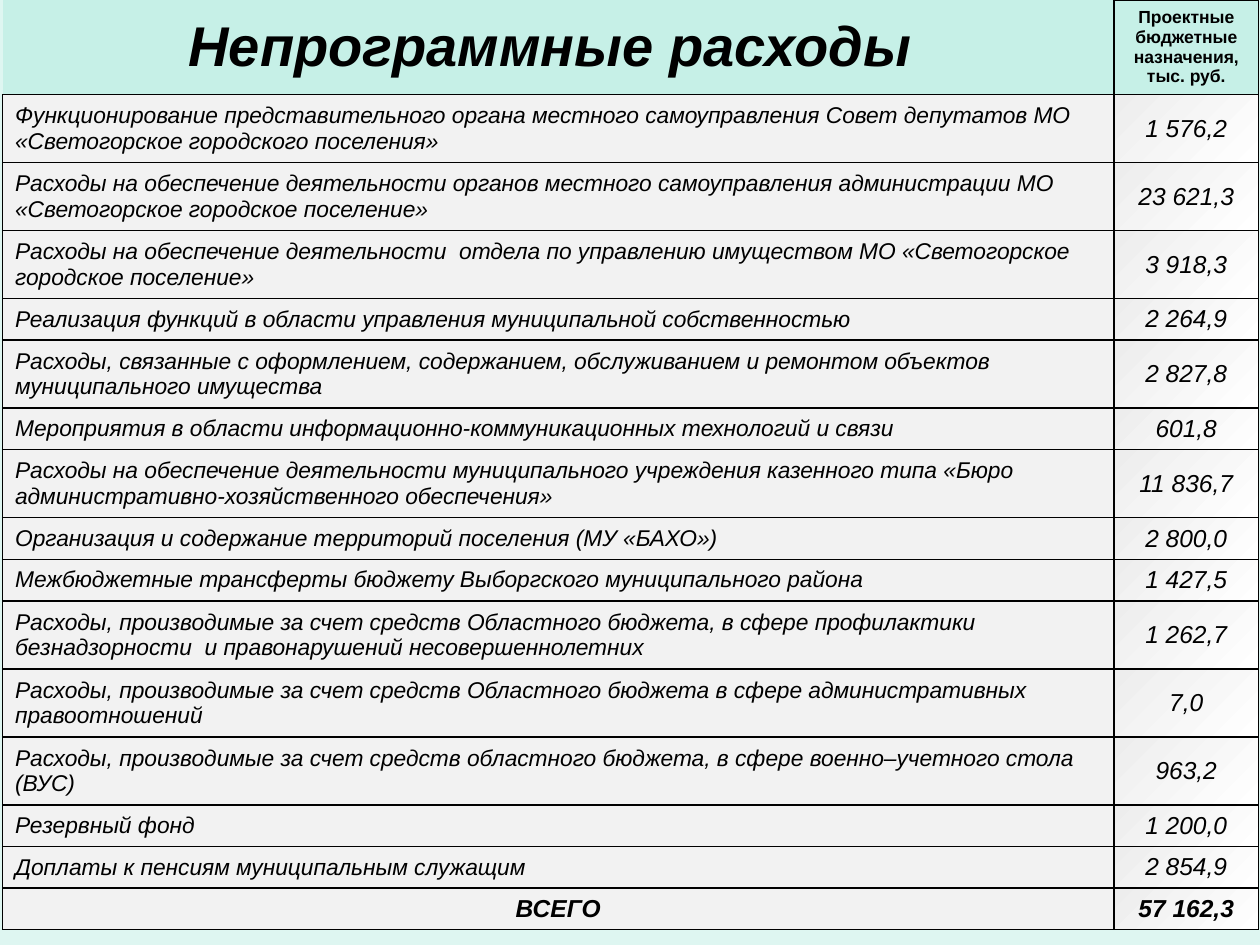
from dataclasses import dataclass

from lxml import etree
from pptx import Presentation
from pptx.dml.color import RGBColor
from pptx.enum import text
from pptx.oxml import ns
from pptx.util import Inches, Pt


@dataclass(frozen=True)
class Theme:
    font: str = "Arial"
    ink: str = "000000"
    page: str = "DEF6F1"
    header: str = "C6F0E7"
    label: str = "F2F2F2"
    amount: tuple = ("EDEDED", "FFFFFF")
    title_size: int = 32
    heading_size: int = 10
    label_size: int = 13
    amount_size: int = 14
    border: int = 1


THEME = Theme()
LEFT, TOP = 0.02, 0
COLUMN_WIDTHS = (8.82, 1.15)
HEADER_HEIGHT = 0.75
LINE_HEIGHTS = {1: 0.33, 2: 0.54}

HEADINGS = ("Непрограммные расходы ", "Проектные бюджетные назначения, тыс. руб.")
TOTAL = ("ВСЕГО", "57 162,3")
# Label, amount, number of text lines in the label
EXPENSES = [
    ("Функционирование представительного органа местного самоуправления "
     "Совет депутатов МО «Светогорское городского поселения»", "1 576,2", 2),
    ("Расходы на обеспечение деятельности органов местного самоуправления "
     "администрации МО «Светогорское городское поселение»", "23 621,3", 2),
    ("Расходы на обеспечение деятельности  отдела по управлению имуществом "
     "МО «Светогорское городское поселение»", "3 918,3", 2),
    ("Реализация функций в области управления муниципальной собственностью",
     "2 264,9", 1),
    ("Расходы, связанные с оформлением, содержанием, обслуживанием и ремонтом "
     "объектов муниципального имущества", "2 827,8", 2),
    ("Мероприятия в области информационно-коммуникационных технологий и связи",
     "601,8", 1),
    ("Расходы на обеспечение деятельности муниципального учреждения казенного "
     "типа «Бюро административно-хозяйственного обеспечения»", "11 836,7", 2),
    ("Организация и содержание территорий поселения (МУ «БАХО»)", "2 800,0", 1),
    ("Межбюджетные трансферты бюджету Выборгского муниципального района",
     "1 427,5", 1),
    ("Расходы, производимые за счет средств Областного бюджета, в сфере "
     "профилактики безнадзорности  и правонарушений несовершеннолетних",
     "1 262,7", 2),
    ("Расходы, производимые за счет средств Областного бюджета в сфере "
     "административных правоотношений", "7,0", 2),
    ("Расходы, производимые за счет средств областного бюджета, в сфере "
     "военно–учетного стола (ВУС)", "963,2", 2),
    ("Резервный фонд", "1 200,0", 1),
    ("Доплаты к пенсиям муниципальным служащим", "2 854,9", 1),
]


def fill_solid(fill, color):
    fill.solid()
    fill.fore_color.rgb = RGBColor.from_string(color)


def fill_gradient(fill, colors):
    """Blend two colours from the top left to the bottom right."""
    fill.gradient()
    fill.gradient_angle = 315
    for stop, color in zip(fill.gradient_stops, colors):
        stop.color.rgb = RGBColor.from_string(color)


def set_borders(cell, visible="LRTB"):
    """Draw the visible sides and clear the others; call before filling."""
    properties = cell._tc.get_or_add_tcPr()
    for side in "LRTB":
        line = etree.SubElement(properties, ns.qn(f"a:ln{side}"))
        if side in visible:
            line.set("w", str(Pt(THEME.border)))
            paint = etree.SubElement(line, ns.qn("a:solidFill"))
            etree.SubElement(paint, ns.qn("a:srgbClr"), val=THEME.ink)
        else:
            etree.SubElement(line, ns.qn("a:noFill"))


def write_cell(cell, words, size, bold=False, italic=True, centred=True):
    cell.text_frame.text = words
    cell.vertical_anchor = text.MSO_ANCHOR.MIDDLE
    cell.margin_left = cell.margin_right = Inches(0.1)
    cell.margin_top = cell.margin_bottom = Inches(0.05)
    para = cell.text_frame.paragraphs[0]
    para.alignment = text.PP_ALIGN.CENTER if centred else text.PP_ALIGN.LEFT
    font = para.runs[0].font
    font.name, font.size = THEME.font, Pt(size)
    font.bold, font.italic = bold, italic
    font.color.rgb = RGBColor.from_string(THEME.ink)


def write_header(title, heading):
    write_cell(title, HEADINGS[0], THEME.title_size, bold=True)
    write_cell(heading, HEADINGS[1], THEME.heading_size, bold=True, italic=False)
    set_borders(title, "RB")
    set_borders(heading)
    for cell in (title, heading):
        fill_solid(cell.fill, THEME.header)


def write_row(label, amount, words, value, total=False):
    label_size = THEME.amount_size if total else THEME.label_size
    write_cell(label, words, label_size, bold=total, centred=total)
    write_cell(amount, value, THEME.amount_size, bold=total)
    for cell in (label, amount):
        set_borders(cell)
    fill_solid(label.fill, THEME.label)
    fill_gradient(amount.fill, THEME.amount)


def add_budget_table(page):
    heights = [HEADER_HEIGHT]
    heights += [LINE_HEIGHTS[lines] for _, _, lines in EXPENSES]
    heights.append(LINE_HEIGHTS[1])
    table = page.shapes.add_table(
        len(heights), len(COLUMN_WIDTHS), Inches(LEFT), Inches(TOP),
        Inches(sum(COLUMN_WIDTHS)), Inches(sum(heights))).table
    table.first_row = table.horz_banding = False
    for column, width in zip(table.columns, COLUMN_WIDTHS):
        column.width = Inches(width)
    for row, height in zip(table.rows, heights):
        row.height = Inches(height)

    header, *body, total = table.rows
    write_header(*header.cells)
    for row, (words, value, _) in zip(body, EXPENSES):
        write_row(*row.cells, words, value)
    write_row(*total.cells, *TOTAL, total=True)


def main():
    deck = Presentation()
    deck.slide_width, deck.slide_height = Inches(10), Inches(7.5)
    page = deck.slides.add_slide(deck.slide_layouts.get_by_name("Blank"))
    fill_solid(page.background.fill, THEME.page)
    add_budget_table(page)
    deck.save("out.pptx")


if __name__ == "__main__":
    main()
